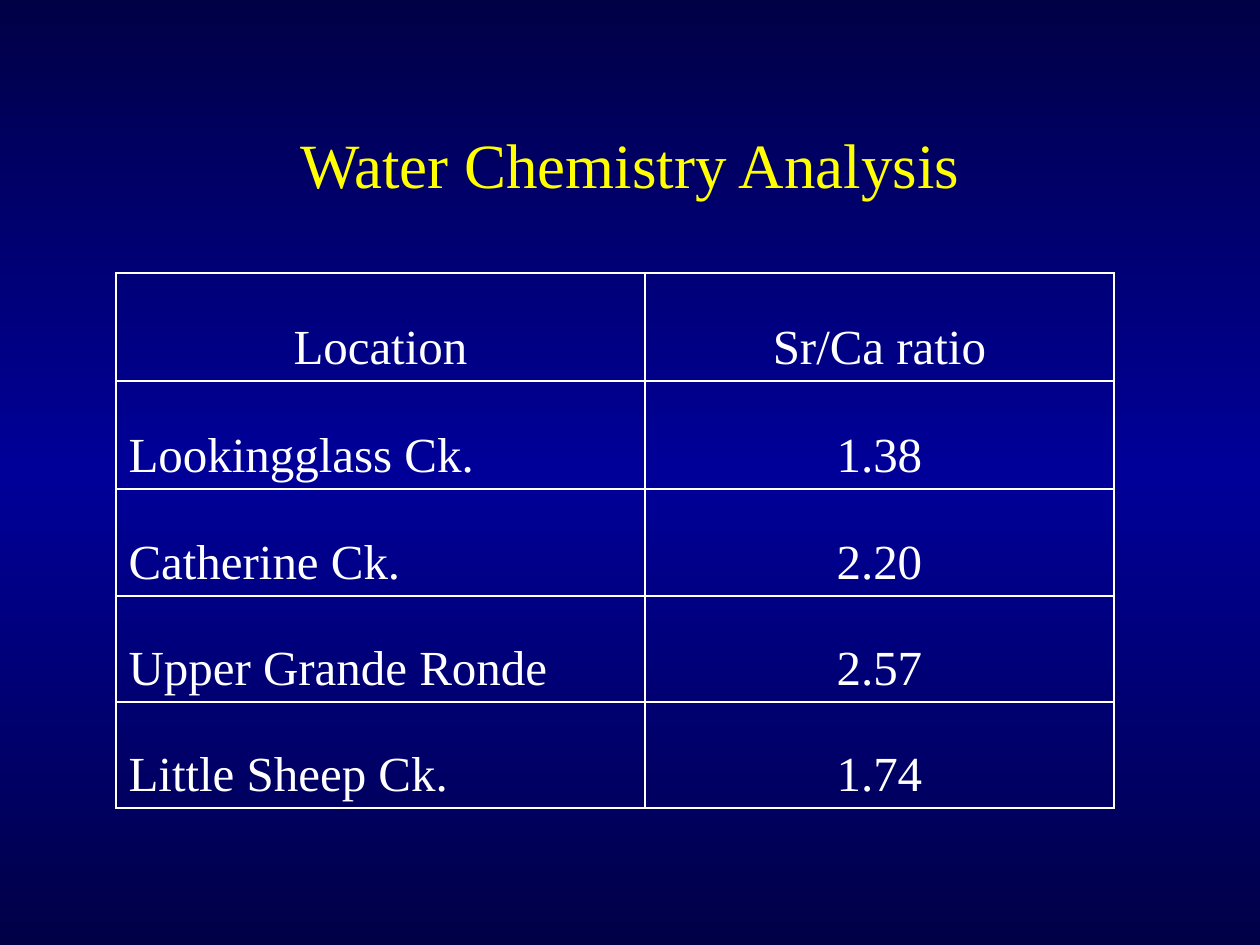
from copy import deepcopy
from dataclasses import dataclass

from lxml import etree
from pptx import Presentation
from pptx import util as u
from pptx.dml.color import RGBColor
from pptx.enum import text
from pptx.oxml import ns

EMU_PER_PX = 914400 // 126


def px(length):
    return u.Emu(length * EMU_PER_PX)


@dataclass(frozen=True)
class Theme:
    font: str = "Times New Roman"
    title_color: str = "FFFF00"
    text_color: str = "FFFFFF"
    border_color: str = "FFFFFF"
    edge_color: str = "000047"
    middle_color: str = "000099"
    title_size: int = 36
    table_size: int = 28
    border_width: int = 1


class SlideBuilder:
    def __init__(self, slide, theme):
        self.slide = slide
        self.theme = theme

    def background(self):
        """Vertical gradient, dark at both edges and bright in the middle."""
        fill = self.slide.background.fill
        fill.gradient()
        fill.gradient_angle = 90
        first_stop = self.slide.background._cSld.find(".//" + ns.qn("a:gs"))
        first_stop.addnext(deepcopy(first_stop))
        colors = (self.theme.edge_color, self.theme.middle_color, self.theme.edge_color)
        for stop, color, position in zip(fill.gradient_stops, colors, (0, 0.5, 1)):
            stop.color.rgb = RGBColor.from_string(color)
            stop.position = position

    def format_text(self, paragraph, size, color, alignment):
        paragraph.alignment = alignment
        for run in paragraph.runs:
            run.font.name = self.theme.font
            run.font.size = u.Pt(size)
            run.font.color.rgb = RGBColor.from_string(color)

    def title(self, wording, left, top, width, height):
        shape = self.slide.shapes.title
        shape.left, shape.top = px(left), px(top)
        shape.width, shape.height = px(width), px(height)
        frame = shape.text_frame
        frame.text = wording
        frame.vertical_anchor = text.MSO_ANCHOR.MIDDLE
        self.format_text(frame.paragraphs[0], self.theme.title_size,
                         self.theme.title_color, text.PP_ALIGN.CENTER)

    def cell_borders(self, cell):
        properties = cell._tc.get_or_add_tcPr()
        for side in ("lnL", "lnR", "lnT", "lnB"):
            line = etree.SubElement(properties, ns.qn(f"a:{side}"),
                                    w=str(u.Pt(self.theme.border_width)))
            fill = etree.SubElement(line, ns.qn("a:solidFill"))
            etree.SubElement(fill, ns.qn("a:srgbClr"), val=self.theme.border_color)

    def table(self, rows, left, top, column_widths, row_heights):
        table = self.slide.shapes.add_table(
            len(rows), len(column_widths), px(left), px(top),
            px(sum(column_widths)), px(sum(row_heights))).table
        table.first_row = table.horz_banding = False
        for column, width in zip(table.columns, column_widths):
            column.width = px(width)
        for row, height in zip(table.rows, row_heights):
            row.height = px(height)
        for row_index, values in enumerate(rows):
            for column_index, value in enumerate(values):
                cell = table.cell(row_index, column_index)
                self.cell_borders(cell)
                cell.fill.background()
                cell.vertical_anchor = text.MSO_ANCHOR.BOTTOM
                cell.text_frame.text = value
                paragraph = cell.text_frame.paragraphs[0]
                paragraph.space_before = u.Pt(self.theme.table_size * 0.2)
                is_name = row_index > 0 and column_index == 0
                alignment = text.PP_ALIGN.LEFT if is_name else text.PP_ALIGN.CENTER
                self.format_text(paragraph, self.theme.table_size,
                                 self.theme.text_color, alignment)


def main():
    presentation = Presentation()
    presentation.slide_width, presentation.slide_height = px(1260), px(945)
    title_only = presentation.slide_layouts[5]
    builder = SlideBuilder(presentation.slides.add_slide(title_only), Theme())

    # Background and title
    builder.background()
    builder.title("Water Chemistry Analysis", 94, 84, 1072, 158)

    # Ratios by location
    ratios = [
        ("Location", "Sr/Ca ratio"),
        ("Lookingglass Ck.", "1.38"),
        ("Catherine Ck.", "2.20"),
        ("Upper Grande Ronde", "2.57"),
        ("Little Sheep Ck.", "1.74"),
    ]
    builder.table(ratios, 116, 273, (529, 469), (108, 108, 107, 106, 106))

    presentation.save("out.pptx")


if __name__ == "__main__":
    main()
